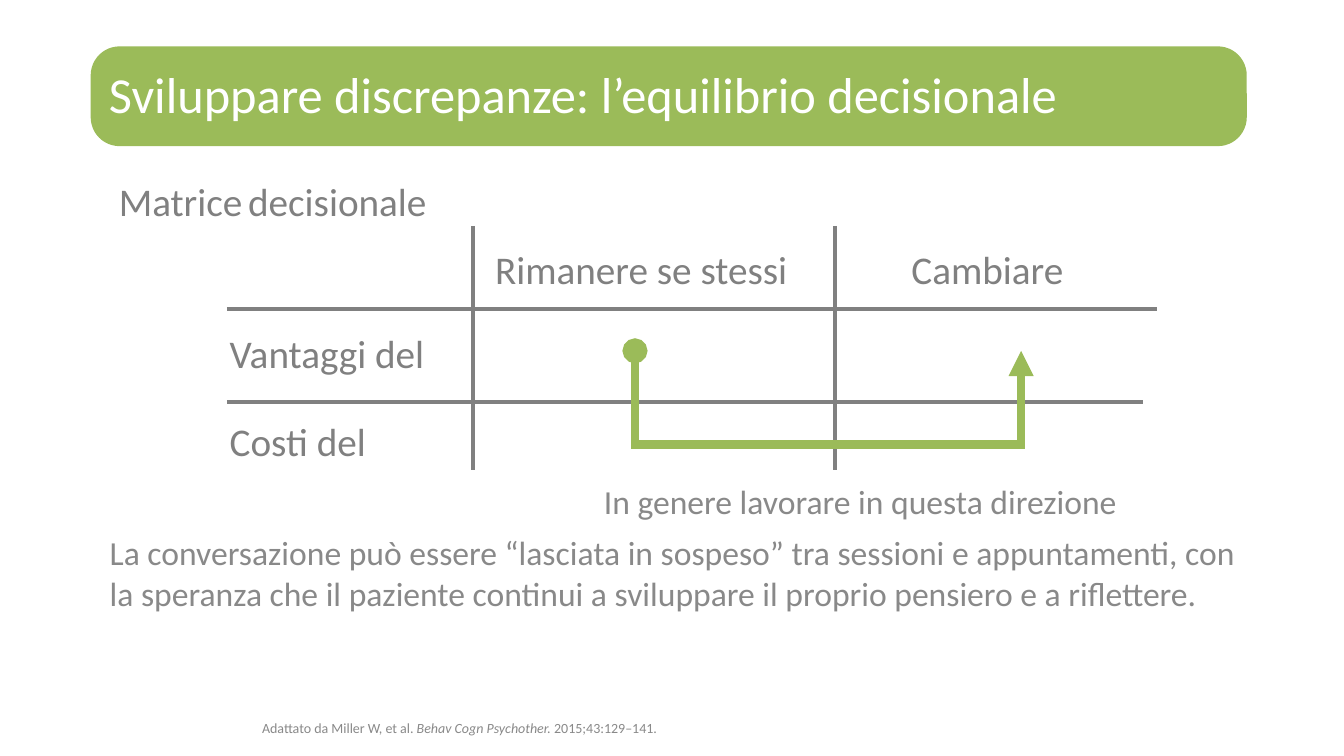
from dataclasses import dataclass

from lxml.etree import SubElement
from pptx import Presentation
from pptx.dml.color import RGBColor
from pptx.enum.shapes import MSO_CONNECTOR, MSO_SHAPE
from pptx.enum.text import MSO_ANCHOR, PP_ALIGN
from pptx.oxml.ns import qn
from pptx.slide import Slide
from pptx.util import Pt

FONT = "Calibri"
GREEN, WHITE, BLACK = "9BBB59", "FFFFFF", "000000"
GRAY, LIGHT_GRAY = "808080", "898989"


@dataclass(frozen=True)
class Span:
    text: str
    size: float
    color: str
    italic: bool = False


@dataclass(frozen=True)
class Label:
    left: float
    top: float
    width: float
    height: float
    spans: tuple[Span, ...]
    align: PP_ALIGN = PP_ALIGN.LEFT
    anchor: MSO_ANCHOR = MSO_ANCHOR.TOP
    line_spacing: float = 1.0
    has_margins: bool = True


@dataclass(frozen=True)
class Rule:
    x1: float
    y1: float
    x2: float
    y2: float


HEADER_TOP, HEADER_HEIGHT = 171.4, 41
ROW_LEFT, ROW_WIDTH = 157, 222.5
RULE_TOP, RULE_BOTTOM, RULE_LEFT = 161.3, 335.5, 162

LABELS = (
    Label(77.8, 44.6, 805, 51.8,
          (Span("Sviluppare discrepanze: l’equilibrio decisionale", 36, WHITE),),
          anchor=MSO_ANCHOR.MIDDLE, line_spacing=0.8, has_margins=False),
    Label(77.8, 123.1, 480.2, 41,
          (Span("Matrice", 28, GRAY), Span(" ", 18, BLACK), Span("decisionale", 28, GRAY))),
    Label(337.7, HEADER_TOP, 240.5, HEADER_HEIGHT,
          (Span("Rimanere se stessi", 28, GRAY),), PP_ALIGN.CENTER),
    Label(594, HEADER_TOP, 222.5, HEADER_HEIGHT,
          (Span("Cambiare", 28, GRAY),), PP_ALIGN.CENTER),
    Label(ROW_LEFT, 231.8, ROW_WIDTH, 41, (Span("Vantaggi del", 28, GRAY),)),
    Label(ROW_LEFT, 294.5, ROW_WIDTH, 41, (Span("Costi del", 28, GRAY),)),
    Label(410.4, 339.8, 408.2, 36,
          (Span("In genere lavorare in questa direzione", 24, LIGHT_GRAY),), PP_ALIGN.CENTER),
    Label(71.3, 376.6, 823, 65.5,
          (Span("La conversazione può essere “lasciata in sospeso” tra sessioni e "
                "appuntamenti, con la speranza che il paziente continui a sviluppare "
                "il proprio pensiero e a riflettere.", 24, LIGHT_GRAY),)),
    Label(187.2, 465.1, 707, 61.2,
          (Span("Adattato da Miller W, et al. ", 10, LIGHT_GRAY),
           Span("Behav Cogn Psychother. ", 10, LIGHT_GRAY, italic=True),
           Span("2015;43:129–141.", 10, LIGHT_GRAY)),
          anchor=MSO_ANCHOR.BOTTOM, line_spacing=0.9, has_margins=False),
)

RULES = (
    Rule(337.7, RULE_TOP, 337.7, RULE_BOTTOM),
    Rule(596.2, RULE_TOP, 596.2, RULE_BOTTOM),
    Rule(RULE_LEFT, 221, 826.6, 221),
    Rule(RULE_LEFT, 287.3, 816.5, 287.3),
)

DIRECTION_POINTS = ((453.6, 250.6), (453.6, 317.5), (729.4, 317.5), (729.4, 250.6))


def rgb(color: str) -> RGBColor:
    return RGBColor.from_string(color)


def add_title_band(page: Slide) -> None:
    band = page.shapes.add_shape(
        MSO_SHAPE.ROUNDED_RECTANGLE, Pt(64.8), Pt(33.1), Pt(825.8), Pt(71.3))
    band.adjustments[0] = 0.29
    band.shadow.inherit = False
    band.fill.solid()
    band.fill.fore_color.rgb = rgb(GREEN)
    band.line.fill.background()


def add_label(page: Slide, label: Label) -> None:
    box = page.shapes.add_textbox(
        Pt(label.left), Pt(label.top), Pt(label.width), Pt(label.height))
    frame = box.text_frame
    frame.word_wrap = True
    frame.vertical_anchor = label.anchor
    if not label.has_margins:
        frame.margin_left = frame.margin_right = Pt(0)
        frame.margin_top = frame.margin_bottom = Pt(0)
    para = frame.paragraphs[0]
    para.alignment = label.align
    para.line_spacing = label.line_spacing
    for span in label.spans:
        run = para.add_run()
        run.text = span.text
        run.font.name = FONT
        run.font.size = Pt(span.size)
        run.font.italic = span.italic
        run.font.color.rgb = rgb(span.color)


def add_rule(page: Slide, rule: Rule) -> None:
    line = page.shapes.add_connector(
        MSO_CONNECTOR.STRAIGHT, Pt(rule.x1), Pt(rule.y1), Pt(rule.x2), Pt(rule.y2))
    line.line.color.rgb = rgb(GRAY)
    line.line.width = Pt(2.75)
    SubElement(line.element.spPr, qn("a:effectLst"))


def add_direction_arrow(page: Slide) -> None:
    start, *corners = [(Pt(x), Pt(y)) for x, y in DIRECTION_POINTS]
    builder = page.shapes.build_freeform(*start)
    builder.add_line_segments(corners, close=False)
    arrow = builder.convert_to_shape()
    arrow.shadow.inherit = False
    arrow.fill.background()
    arrow.line.color.rgb = rgb(GREEN)
    arrow.line.width = Pt(6)
    outline = arrow.element.spPr.find(qn("a:ln"))
    SubElement(outline, qn("a:miter"), lim="800000")
    SubElement(outline, qn("a:headEnd"), type="oval")
    SubElement(outline, qn("a:tailEnd"), type="triangle")


def main() -> None:
    deck = Presentation()
    deck.slide_width, deck.slide_height = Pt(960), Pt(540)
    page = deck.slides.add_slide(deck.slide_layouts[6])
    add_title_band(page)
    for rule in RULES:
        add_rule(page, rule)
    for label in LABELS:
        add_label(page, label)
    add_direction_arrow(page)
    deck.save("out.pptx")


if __name__ == "__main__":
    main()
